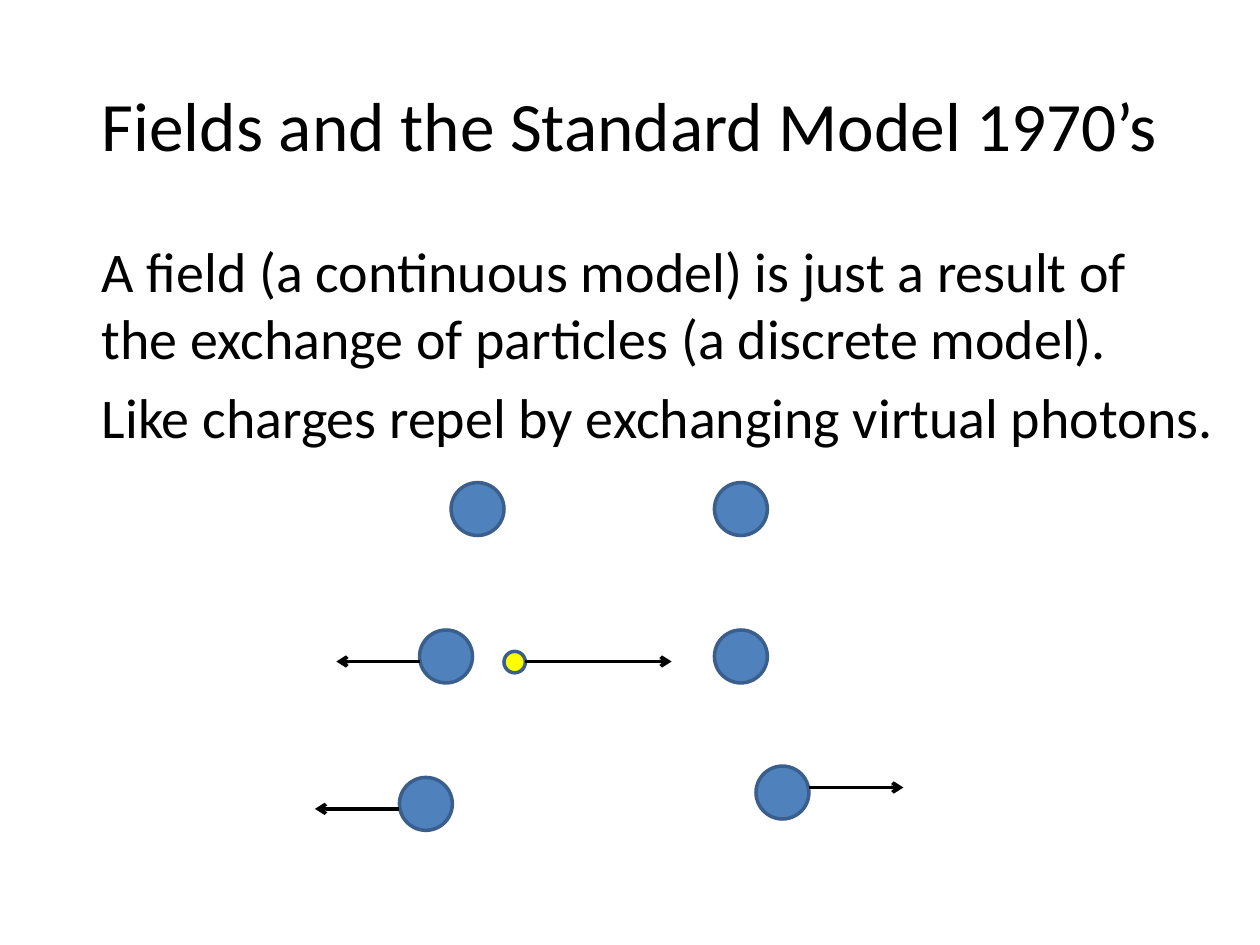
from dataclasses import dataclass

from lxml import etree
from pptx import Presentation
from pptx.dml.color import RGBColor
from pptx.enum.shapes import MSO_CONNECTOR, MSO_SHAPE
from pptx.enum.text import MSO_ANCHOR, PP_ALIGN
from pptx.oxml.ns import qn
from pptx.util import Inches, Pt

OVAL = MSO_SHAPE.OVAL
STRAIGHT = MSO_CONNECTOR.STRAIGHT
TOP, MIDDLE = MSO_ANCHOR.TOP, MSO_ANCHOR.MIDDLE
LEFT, CENTER = PP_ALIGN.LEFT, PP_ALIGN.CENTER


@dataclass(frozen=True)
class Theme:
    font: str = "Calibri"
    title_size: float = 39.6
    body_size: float = 32
    line_width: float = 2
    ink: RGBColor = RGBColor(0x00, 0x00, 0x00)
    charge: RGBColor = RGBColor(0x4F, 0x81, 0xBD)
    photon: RGBColor = RGBColor(0xFF, 0xFF, 0x00)
    outline: RGBColor = RGBColor(0x3A, 0x5F, 0x8C)


THEME = Theme()
CHARGE_SIZE, PHOTON_SIZE = 0.42, 0.17

TITLE = ["Fields and the Standard Model 1970’s"]
STATEMENTS = [
    "A field (a continuous model) is just a result of the exchange of particles (a discrete model).",
    "Like charges repel by exchanging virtual photons.",
]
STAGES = [
    {"charges": [(3.58, 3.83), (5.67, 3.83)], "photons": [], "motions": []},
    {
        "charges": [(5.67, 5), (3.33, 5)],
        "photons": [(4, 5.17)],
        "motions": [(3.33, 2.67, 5.25), (4.17, 5.33, 5.25)],
    },
    {
        "charges": [(3.17, 6.17), (6, 6.08)],
        "photons": [],
        "motions": [(3.17, 2.5, 6.42), (6.42, 7.17, 6.25)],
    },
]


def add_text(slide, lines, box, size, anchor, align, space_before=0):
    frame = slide.shapes.add_textbox(*map(Inches, box)).text_frame
    frame.word_wrap = True
    frame.vertical_anchor = anchor
    frame.text = "\n".join(lines)
    for paragraph in frame.paragraphs:
        paragraph.alignment = align
        paragraph.space_before = Pt(space_before)
        paragraph.font.name = THEME.font
        paragraph.font.size = Pt(size)
        paragraph.font.color.rgb = THEME.ink


def add_particle(group, position, size, fill):
    particle = group.shapes.add_shape(OVAL, *map(Inches, (*position, size, size)))
    particle.shadow.inherit = False
    particle.fill.solid()
    particle.fill.fore_color.rgb = fill
    particle.line.color.rgb = THEME.outline
    particle.line.width = Pt(THEME.line_width)


def add_motion(group, start, end, y):
    motion = group.shapes.add_connector(STRAIGHT, *map(Inches, (start, y, end, y)))
    motion.line.color.rgb = THEME.ink
    motion.line.width = Pt(THEME.line_width)
    etree.SubElement(motion.line._get_or_add_ln(), qn("a:tailEnd"), type="arrow")
    etree.SubElement(motion._element.spPr, qn("a:effectLst"))


def main():
    """Build the slide on like charges repelling by photon exchange."""
    deck = Presentation()
    deck.slide_width, deck.slide_height = Inches(10), Inches(7.5)
    slide = deck.slides.add_slide(deck.slide_layouts[6])

    add_text(slide, TITLE, (0.5, 0.3, 9, 1.37), THEME.title_size, MIDDLE, CENTER)
    add_text(slide, STATEMENTS, (0.71, 1.83, 9.04, 2.17), THEME.body_size, TOP, LEFT,
             0.2 * THEME.body_size)

    for stage in STAGES:
        group = slide.shapes.add_group_shape()
        for position in stage["charges"]:
            add_particle(group, position, CHARGE_SIZE, THEME.charge)
        for position in stage["photons"]:
            add_particle(group, position, PHOTON_SIZE, THEME.photon)
        for motion in stage["motions"]:
            add_motion(group, *motion)

    deck.save("out.pptx")


if __name__ == "__main__":
    main()
